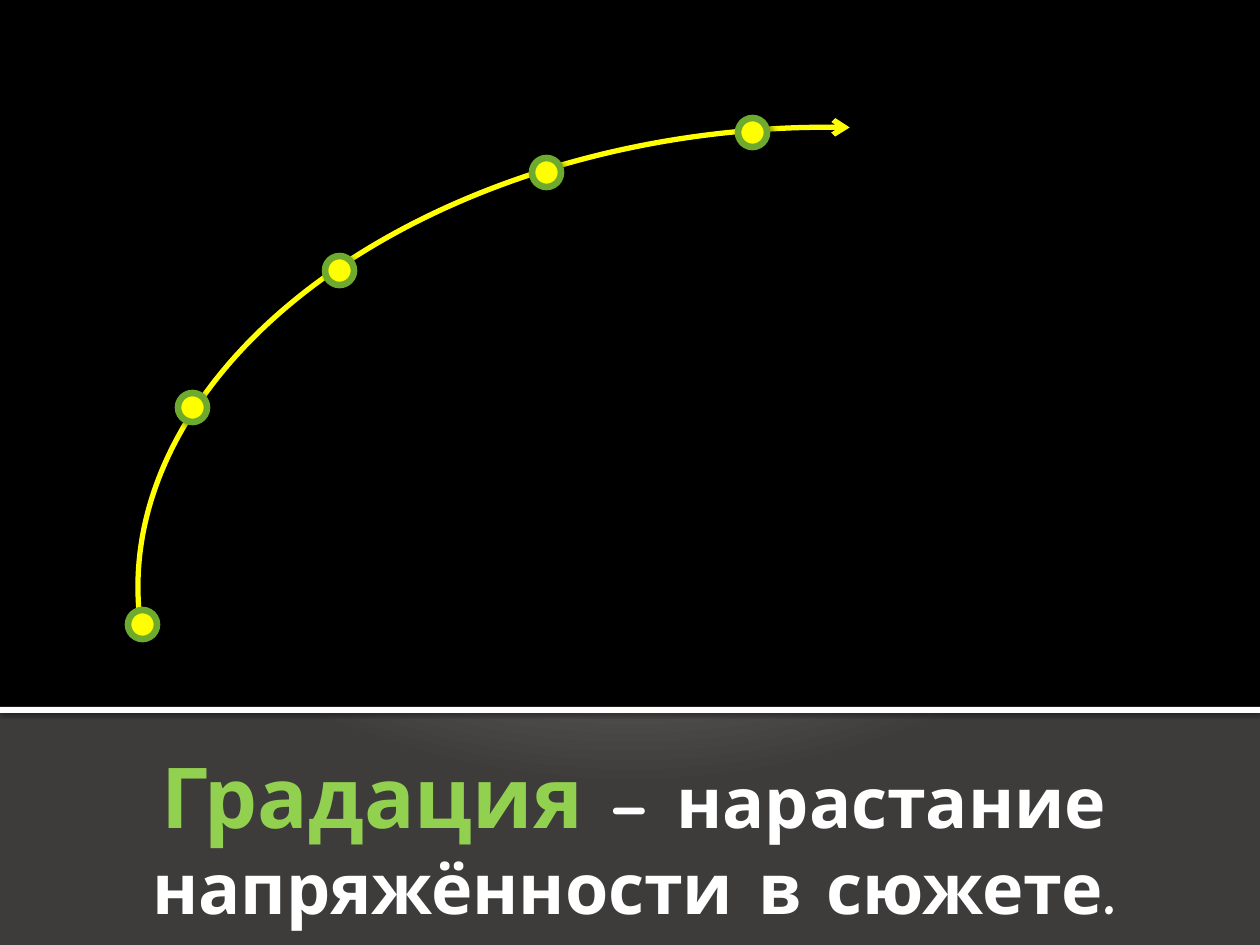
from lxml import etree
from pptx import Presentation
from pptx.dml.color import RGBColor
from pptx.enum.shapes import MSO_SHAPE
from pptx.enum.text import MSO_AUTO_SIZE, PP_ALIGN
from pptx.oxml import parse_xml
from pptx.oxml.ns import qn
from pptx.util import Pt

RECT, OVAL, ARC = MSO_SHAPE.RECTANGLE, MSO_SHAPE.OVAL, MSO_SHAPE.ARC
EMU_PER_PX = 914400 / 126
NS = 'xmlns:a="http://schemas.openxmlformats.org/drawingml/2006/main"'

# Content
FONT = "Comic Neue"
COLORS = {"black": "000000", "white": "FFFFFF", "yellow": "FFFF00",
          "green": "6EAA2E", "lime": "92D050"}
BACKDROP_STOPS = [(0, "CBC8C8"), (12, "CBC8C8"), (20, "C9C6C6"), (100, "3E3B3B")]
CAPTION = [
    ("Градация", {"size": Pt(48)}, "lime"),
    (" ", {"size": Pt(40)}, "lime"),
    ("– нарастание напряжённости в сюжете.", {"size": Pt(40)}, "white"),
]
DOT_SIZE = 29
DOT_CORNERS = [(128, 610), (178, 393), (325, 256), (532, 158), (738, 118)]
# Shadows: opacity %, blur pt, distance pt, direction in degrees
RULE_SHADOW = (60, 2.5, 0.8, 90)
DOT_SHADOW = (40, 4, 3, 45)


def px(*lengths):
    return [round(length * EMU_PER_PX) for length in lengths]


def rgb(name):
    return RGBColor.from_string(COLORS[name])


def add_shape(page, kind, box, fill=None, line=None, width=0, shadow=None):
    shape = page.shapes.add_shape(kind, *px(*box))
    shape.shadow.inherit = False
    if fill:
        shape.fill.solid()
        shape.fill.fore_color.rgb = rgb(fill)
    else:
        shape.fill.background()
    if line:
        shape.line.color.rgb = rgb(line)
        shape.line.width = Pt(width)
    else:
        shape.line.fill.background()
    if shadow:
        opacity, blur, distance, angle = shadow
        effects = shape._element.spPr.find(qn("a:effectLst"))
        effects.append(parse_xml(
            f'<a:outerShdw {NS} blurRad="{Pt(blur)}" dist="{Pt(distance)}" '
            f'dir="{angle * 60000}" rotWithShape="0"><a:srgbClr val="000000">'
            f'<a:alpha val="{opacity * 1000}"/></a:srgbClr></a:outerShdw>'))
    return shape


def set_backdrop(page):
    page.background.fill.solid()
    solid = page._element.find(".//" + qn("a:solidFill"))
    stops = "".join(f'<a:gs pos="{place * 1000}"><a:srgbClr val="{color}"/></a:gs>'
                    for place, color in BACKDROP_STOPS)
    solid.getparent().replace(solid, parse_xml(
        f'<a:gradFill {NS}><a:gsLst>{stops}</a:gsLst><a:path path="circle">'
        '<a:fillToRect l="10000" t="-25000" r="10000" b="125000"/>'
        '</a:path></a:gradFill>'))


def add_caption(page):
    box = page.shapes.add_textbox(*px(88, 738, 1092, 199))
    frame = box.text_frame
    frame.word_wrap = True
    frame.auto_size = MSO_AUTO_SIZE.SHAPE_TO_FIT_TEXT
    para = frame.paragraphs[0]
    para.alignment = PP_ALIGN.CENTER
    for text, style, color in CAPTION:
        span = para.add_run()
        span.text = text
        for key, value in {"name": FONT, "bold": True, **style}.items():
            setattr(span.font, key, value)
        span.font.color.rgb = rgb(color)


def add_curve(page):
    curve = add_shape(page, ARC, (355, -89, 849, 1286), line="yellow", width=3)
    curve.rotation = 264.8
    curve.adjustments[0] = 162
    curve.adjustments[1] = 8.73
    etree.SubElement(curve.line._get_or_add_ln(), qn("a:tailEnd"), type="arrow")


def main():
    deck = Presentation()
    deck.slide_width, deck.slide_height = px(1260, 945)
    page = deck.slides.add_slide(deck.slide_layouts[6])

    # Black stage, white rule and caption band
    set_backdrop(page)
    add_shape(page, RECT, (0, 0, 1260, 708), fill="black")
    add_shape(page, RECT, (0, 707, 1260, 6), fill="white", shadow=RULE_SHADOW)
    add_caption(page)

    # Rising curve with its plot points
    add_curve(page)
    for corner in DOT_CORNERS:
        add_shape(page, OVAL, (*corner, DOT_SIZE, DOT_SIZE), fill="yellow",
                  line="green", width=3.78, shadow=DOT_SHADOW)

    deck.save("out.pptx")


if __name__ == "__main__":
    main()
